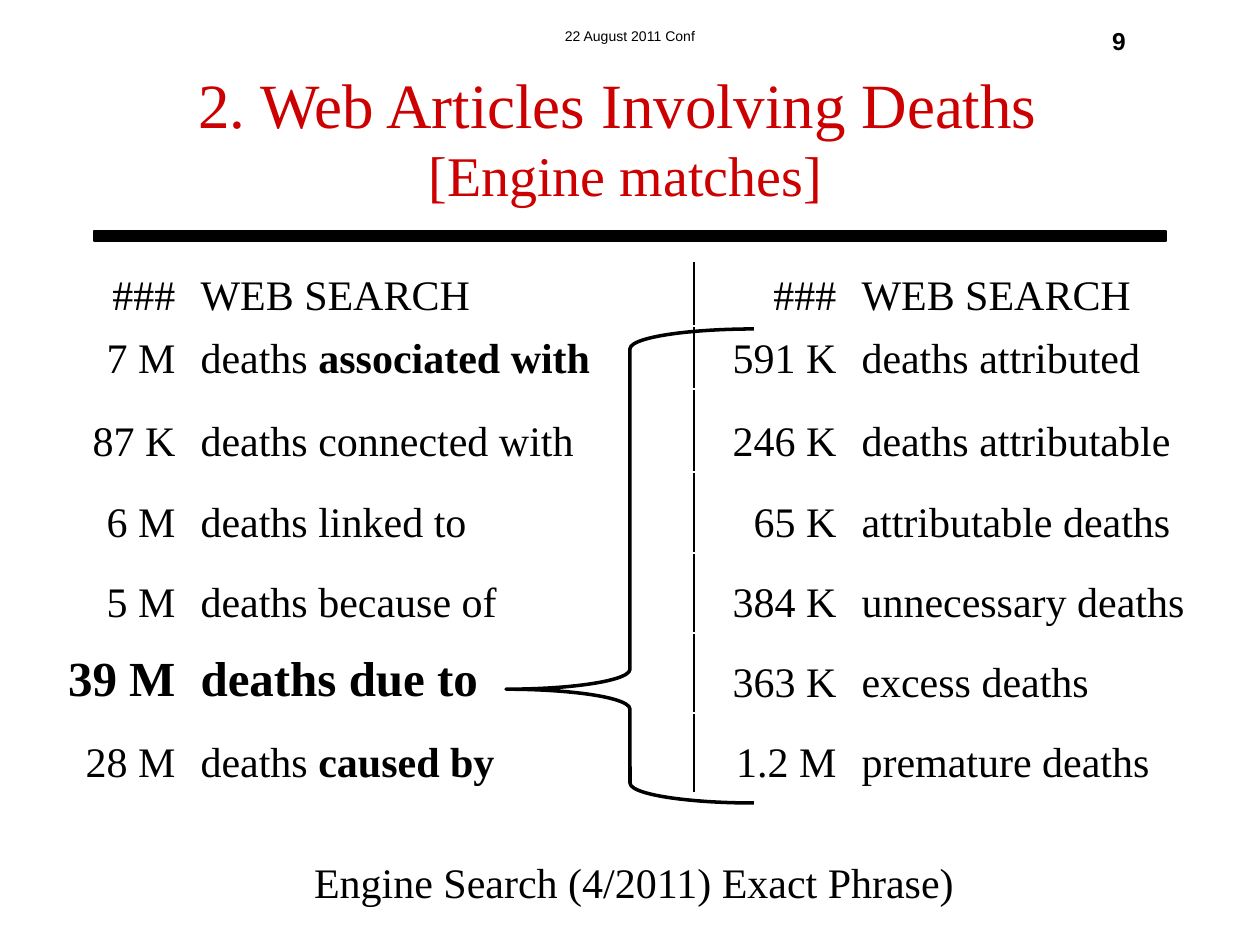
from dataclasses import dataclass

from lxml.etree import SubElement
from pptx import Presentation
from pptx.dml.color import RGBColor
from pptx.enum.shapes import MSO_SHAPE as Shape
from pptx.enum.text import MSO_ANCHOR as Anchor, MSO_AUTO_SIZE as AutoSize, PP_ALIGN as Align
from pptx.oxml.ns import qn
from pptx.util import Emu, Pt

EMU_PER_INCH = 914400
PX_PER_INCH = 126
BLACK = RGBColor(0x00, 0x00, 0x00)
RED = RGBColor(0xCC, 0x00, 0x00)
SERIF = "Times New Roman"
SANS = "Arial"


@dataclass(frozen=True)
class Span:
    text: str
    size: int = 24
    bold: bool = False
    font: str = SERIF
    color: RGBColor = BLACK


@dataclass(frozen=True)
class Box:
    left: int
    top: int
    width: int
    height: int

    def emu(self) -> list[Emu]:
        return [px(side) for side in (self.left, self.top, self.width, self.height)]


@dataclass(frozen=True)
class Match:
    count: str
    phrase: str
    strong: str = ""
    size: int = 24
    bold: bool = False

    def cells(self) -> list[list[Span]]:
        phrase = [Span(self.phrase, self.size, self.bold)]
        if self.strong:
            phrase.append(Span(self.strong, self.size, True))
        return [[Span(self.count, self.size, self.bold)], phrase]


HEADING = Match("###", "WEB SEARCH")
CAUSAL = [
    HEADING,
    Match("7 M", "deaths ", "associated with"),
    Match("87 K", "deaths connected with"),
    Match("6 M", "deaths linked to"),
    Match("5 M", "deaths because of"),
    Match("39 M", "deaths due to", size=28, bold=True),
    Match("28 M", "deaths ", "caused by"),
]
ATTRIBUTED = [
    HEADING,
    Match("591 K", "deaths attributed"),
    Match("246 K", "deaths attributable"),
    Match("65 K", "attributable deaths"),
    Match("384 K", "unnecessary deaths"),
    Match("363 K", "excess deaths"),
    Match("1.2 M", "premature deaths"),
]
COLUMN_WIDTHS = [188, 506, 155, 411]
ROW_HEIGHTS = [63, 63, 83, 81, 80, 80, 80]
TABLE_BOX = Box(0, 263, sum(COLUMN_WIDTHS), sum(ROW_HEIGHTS))
TIGHT_SPACING = 0.95


def px(length: int) -> Emu:
    return Emu(round(length * EMU_PER_INCH / PX_PER_INCH))


def add_span(para, span: Span) -> None:
    run = para.add_run()
    run.text = span.text
    run.font.size = Pt(span.size)
    run.font.bold = span.bold
    run.font.name = span.font
    run.font.color.rgb = span.color


def add_label(page, box: Box, span: Span) -> None:
    frame = page.shapes.add_textbox(*box.emu()).text_frame
    frame.word_wrap = True
    para = frame.paragraphs[0]
    para.alignment = Align.CENTER
    add_span(para, span)


def write_title(page, box: Box, lines: list[Span]) -> None:
    title = page.shapes.title
    title.left, title.top, title.width, title.height = box.emu()
    frame = title.text_frame
    frame.auto_size = AutoSize.NONE
    frame.vertical_anchor = Anchor.MIDDLE
    para = frame.paragraphs[0]
    para.alignment = Align.CENTER
    for index, line in enumerate(lines):
        if index:
            para.add_line_break()
        add_span(para, line)


def add_rule(page, box: Box) -> None:
    rule = page.shapes.add_shape(Shape.RECTANGLE, *box.emu())
    rule.shadow.inherit = False
    rule.fill.solid()
    rule.fill.fore_color.rgb = BLACK
    rule.line.color.rgb = BLACK
    rule.line.width = Pt(0.75)


def add_brace(page, box: Box) -> None:
    brace = page.shapes.add_shape(Shape.LEFT_BRACE, *box.emu())
    brace.shadow.inherit = False
    brace.adjustments[0] = 0.08
    brace.adjustments[1] = 0.76
    brace.fill.background()
    brace.line.color.rgb = BLACK
    brace.line.width = Pt(2)


def add_border(cell, side: str) -> None:
    properties = cell._tc.get_or_add_tcPr()
    line = SubElement(properties, qn(f"a:{side}"), w=str(Pt(1)))
    fill = SubElement(line, qn("a:solidFill"))
    SubElement(fill, qn("a:srgbClr"), val=str(BLACK))
    properties.insert(0, line)


def fill_cell(cell, spans: list[Span], align: Align, spacing: float) -> None:
    cell.fill.background()
    cell.vertical_anchor = Anchor.BOTTOM
    para = cell.text_frame.paragraphs[0]
    para.alignment = align
    para.line_spacing = spacing
    for span in spans:
        add_span(para, span)


def add_match_table(page) -> None:
    table = page.shapes.add_table(len(CAUSAL), len(COLUMN_WIDTHS), *TABLE_BOX.emu()).table
    table.first_row = False
    table.horz_banding = False
    for column, width in zip(table.columns, COLUMN_WIDTHS):
        column.width = px(width)
    for index, (left, right) in enumerate(zip(CAUSAL, ATTRIBUTED)):
        table.rows[index].height = px(ROW_HEIGHTS[index])
        for position, spans in enumerate(left.cells() + right.cells()):
            align = Align.LEFT if position % 2 else Align.RIGHT
            spacing = 1.0 if position < 2 and index < 3 else TIGHT_SPACING
            fill_cell(table.cell(index, position), spans, align, spacing)
        add_border(table.cell(index, 1), "lnR")
        add_border(table.cell(index, 2), "lnL")


def main() -> None:
    deck = Presentation()
    deck.slide_width = px(1260)
    deck.slide_height = px(945)
    page = deck.slides.add_slide(deck.slide_layouts[5])
    add_rule(page, Box(94, 231, 1072, 10))
    add_label(page, Box(525, 21, 210, 32), Span("22 August 2011 Conf", 8, font=SANS))
    add_label(page, Box(1077, 20, 84, 47), Span("9", 14, True, SANS))
    write_title(page, Box(92, 63, 1067, 147), [
        Span("2. Web Articles Involving Deaths ", 36, color=RED),
        Span("[Engine matches]", 32, color=RED),
    ])
    add_label(page, Box(40, 850, 1188, 74), Span("Engine Search (4/2011) Exact Phrase)"))
    add_match_table(page)
    add_brace(page, Box(506, 329, 248, 474))
    deck.save("out.pptx")


if __name__ == "__main__":
    main()
